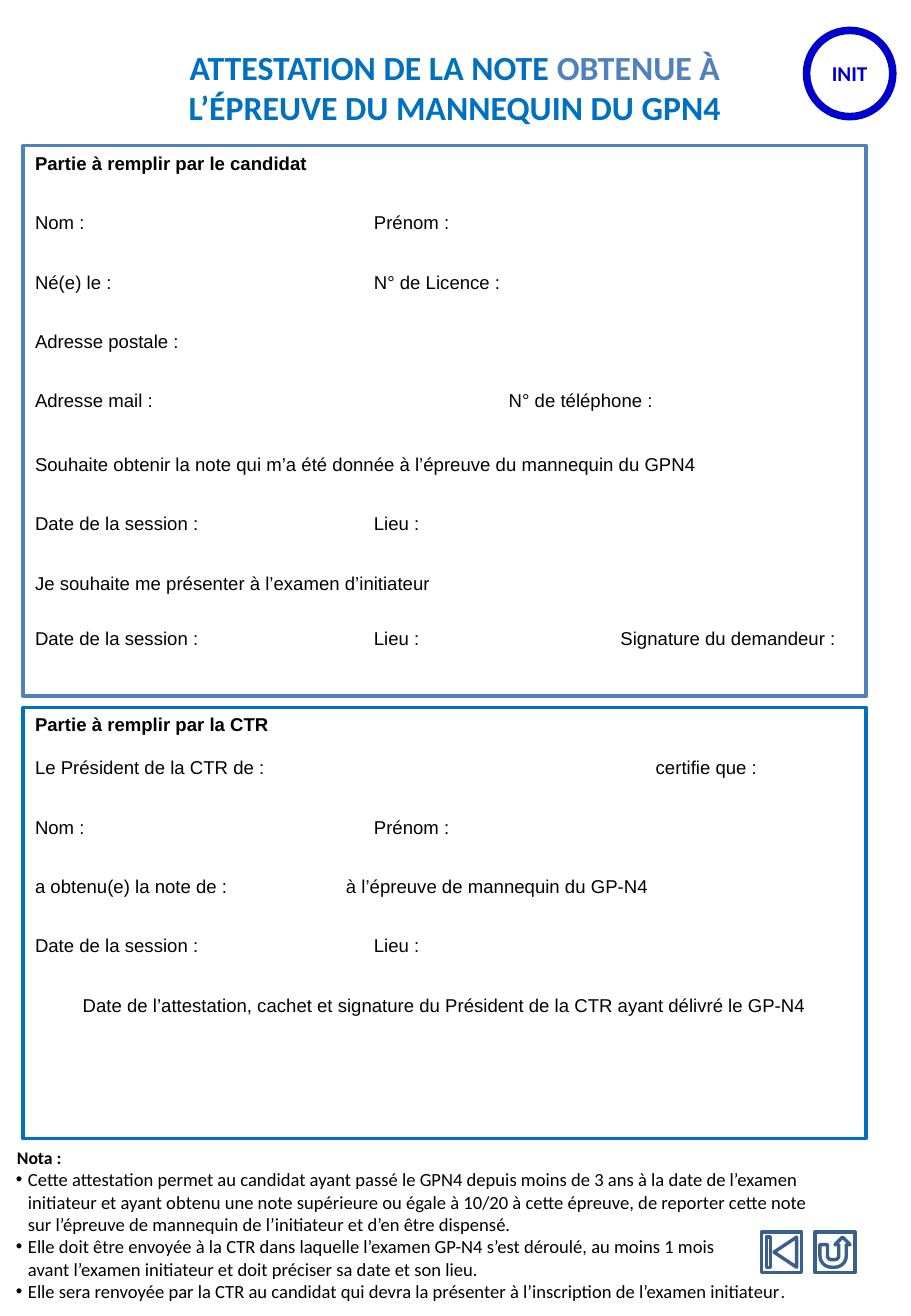
import pptx
import pptx.dml.color
import pptx.enum.shapes
import pptx.enum.text
import pptx.oxml
import pptx.oxml.ns
import pptx.util
from pptx.util import Inches

SHAPE = pptx.enum.shapes.MSO_SHAPE
ALIGN = pptx.enum.text.PP_ALIGN
ANCHOR = pptx.enum.text.MSO_ANCHOR
BLUE, STEEL, NAVY, RING, BLACK = "0070C0", "4F81BD", "000080", "0000CC", "000000"


def write(para, text, color, **formats):
    """Append a run to the paragraph with the given font formats."""
    span = para.add_run()
    span.text = text
    span.font.color.rgb = pptx.dml.color.RGBColor.from_string(color)
    formats["size"] = pptx.util.Pt(formats["size"])
    for name, value in formats.items():
        setattr(span.font, name, value)


def outline(parent, kind, place, color, width):
    """Add an unfilled shape with a coloured border."""
    shape = parent.add_shape(kind, *[Inches(length) for length in place])
    shape.shadow.inherit = False
    shape.fill.background()
    shape.line.color.rgb = pptx.dml.color.RGBColor.from_string(color)
    shape.line.width = pptx.util.Pt(width)
    return shape


deck = pptx.Presentation()
deck.slide_width, deck.slide_height = Inches(7.5), Inches(10.83)
slide = deck.slides.add_slide(deck.slide_layouts[1])
title, nota = slide.placeholders

# Title and note placeholders
for holder, place, anchor in [
    (title, (1.29, 0.33, 4.91, 0.77), ANCHOR.MIDDLE),
    (nota, (0.03, 9.39, 6.82, 1.39), ANCHOR.TOP),
]:
    holder.left, holder.top, holder.width, holder.height = [Inches(n) for n in place]
    frame = holder.text_frame
    frame.auto_size = pptx.enum.text.MSO_AUTO_SIZE.NONE
    frame.word_wrap = True
    frame.vertical_anchor = anchor

heading = title.text_frame.paragraphs[0]
heading.alignment = ALIGN.CENTER
for text, color in [
    ("ATTESTATION DE LA NOTE ", BLUE),
    ("OBTENUE À ", STEEL),
    ("L’ÉPREUVE DU MANNEQUIN DU GPN4", BLUE),
]:
    write(heading, text, color, name="Calibri", size=20, bold=True)

# Initiator badge
badge = outline(slide.shapes, SHAPE.OVAL, (6.64, 0.25, 0.71, 0.71), RING, 4.5)
badge.fill.solid()
badge.fill.fore_color.rgb = pptx.dml.color.RGBColor.from_string("FFFFFF")
badge.text_frame.word_wrap = False
badge.text_frame.vertical_anchor = ANCHOR.MIDDLE
label = badge.text_frame.paragraphs[0]
label.alignment = ALIGN.CENTER
write(label, "INIT", RING, name="Calibri", size=12.5, bold=True)

# Form parts: each row is text, space before, tab stops
COLUMN = 2.79
GAP = 22
candidate_rows = [
    ("Partie à remplir par le candidat", 0, []),
    ("Nom :\tPrénom :", GAP, [COLUMN]),
    ("Né(e) le :\tN° de Licence :", GAP, [COLUMN]),
    ("Adresse postale :", GAP, []),
    ("Adresse mail :\tN° de téléphone :", GAP, [3.9]),
    ("Souhaite obtenir la note qui m’a été donnée à l’épreuve du mannequin du GPN4", 24.4, []),
    ("Date de la session :\tLieu :", GAP, [COLUMN]),
    ("Je souhaite me présenter à l’examen d’initiateur", GAP, []),
    ("Date de la session :\tLieu :\tSignature du demandeur :", 19.5, [COLUMN, 4.82]),
]
committee_rows = [
    ("Partie à remplir par la CTR", 0, []),
    ("Le Président de la CTR de :\tcertifie que :", 12.2, [5.11]),
    ("Nom :\tPrénom :", GAP, [COLUMN]),
    ("a obtenu(e) la note de :\tà l’épreuve de mannequin du GP-N4", GAP, [2.56]),
    ("Date de la session :\tLieu :", GAP, [COLUMN]),
    ("Date de l’attestation, cachet et signature du Président de la CTR ayant délivré le GP-N4", GAP, []),
]
for top, height, color, rows in [
    (1.2, 4.53, STEEL, candidate_rows),
    (5.82, 3.55, BLUE, committee_rows),
]:
    box = outline(slide.shapes, SHAPE.RECTANGLE, (0.19, top, 6.94, height), color, 2)
    frame = box.text_frame
    frame.word_wrap = True
    frame.vertical_anchor = ANCHOR.TOP
    for index, (text, gap, stops) in enumerate(rows):
        para = frame.add_paragraph() if index else frame.paragraphs[0]
        para.alignment = ALIGN.LEFT
        para.space_before = pptx.util.Pt(gap)
        if stops:
            tabs = "".join(f'<a:tab pos="{Inches(stop)}" algn="l"/>' for stop in stops)
            para._p.get_or_add_pPr().append(pptx.oxml.parse_xml(
                f'<a:tabLst {pptx.oxml.ns.nsdecls("a")}>{tabs}</a:tabLst>'))
        write(para, text, BLACK, name="Arial", size=11, bold=index == 0)
para.alignment = ALIGN.CENTER

# Notes
notes = [
    ["Nota :"],
    ["Cette attestation permet au candidat ayant passé le GPN4 depuis moins de 3 ans à la date "
     "de l’examen initiateur et ayant obtenu une note supérieure ou égale à 10/20 à cette épreuve, "
     "de reporter cette note sur l’épreuve de mannequin de l’initiateur et d’en être dispensé."],
    ["Elle doit être envoyée à la CTR dans laquelle l’examen GP-N4 s’est déroulé, au moins 1 mois",
     "avant l’examen initiateur et doit préciser sa date et son lieu."],
    ["Elle sera renvoyée par la CTR au candidat qui devra la présenter à l’inscription "
     "de l’examen initiateur"],
]
for index, lines in enumerate(notes):
    para = nota.text_frame.add_paragraph() if index else nota.text_frame.paragraphs[0]
    para.alignment = ALIGN.LEFT
    para.space_before = pptx.util.Pt(0)
    properties = para._p.get_or_add_pPr()
    properties.set("marL", str(Inches(0.1 if index else 0.01)))
    properties.set("indent", str(Inches(-0.1 if index else 0)))
    bullet = 'buChar char="•"' if index else "buNone"
    properties.append(pptx.oxml.parse_xml(f'<a:{bullet} {pptx.oxml.ns.nsdecls("a")}/>'))
    for number, line in enumerate(lines):
        if number:
            para.add_line_break()
        write(para, line, BLACK, name="Calibri", size=11 if index else 10.5, bold=index == 0)
write(para, ".", NAVY, name="Calibri", size=11, bold=False)

# Navigation buttons
for left, kind in [(6.27, SHAPE.ACTION_BUTTON_BEGINNING), (6.71, SHAPE.ACTION_BUTTON_RETURN)]:
    outline(slide.shapes, kind, (left, 10.14, 0.33, 0.33), "3A5F8C", 2)

deck.save("out.pptx")
